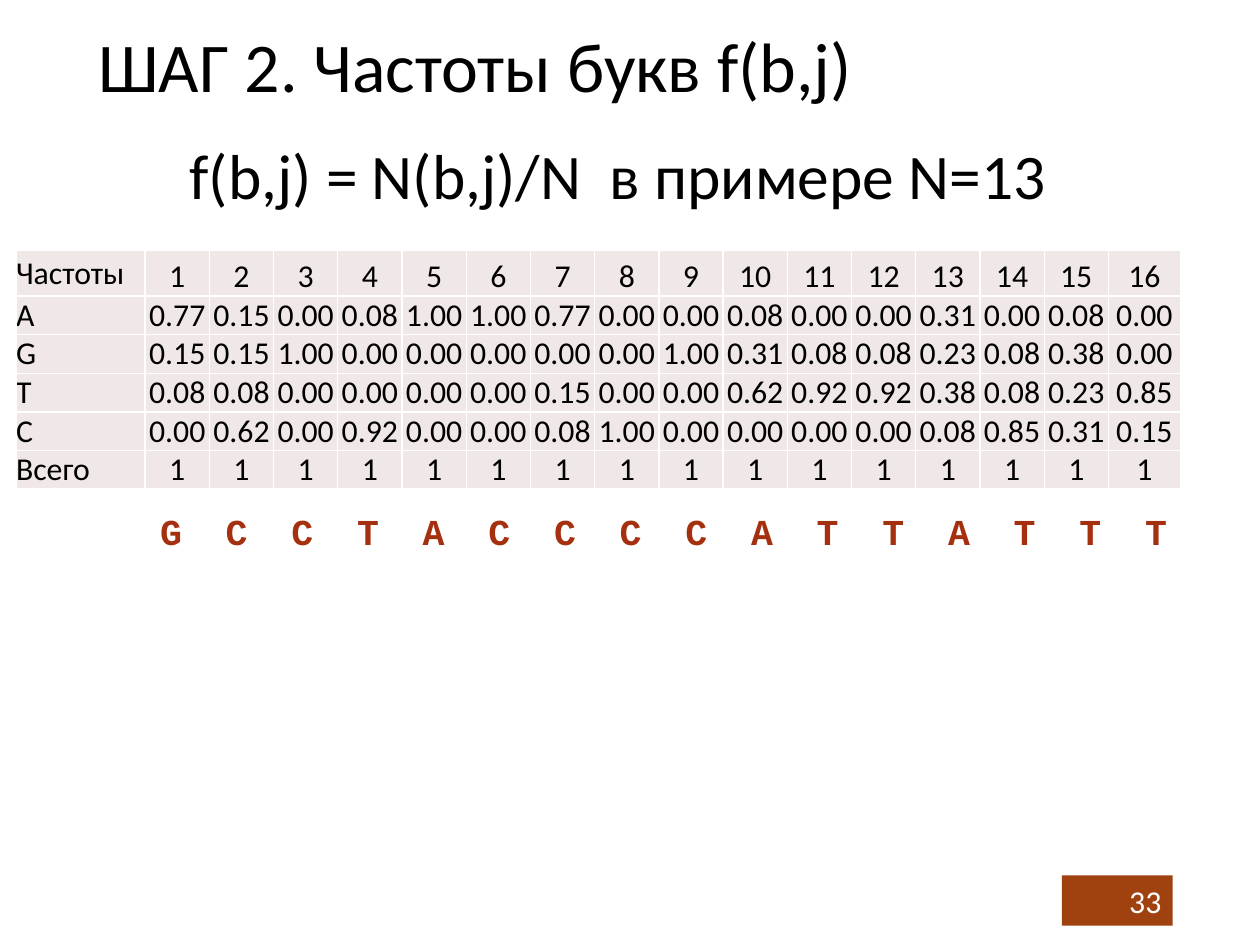
"""Build the slide on letter frequencies f(b,j)."""
from lxml.etree import SubElement
from pptx import Presentation
from pptx.dml.color import RGBColor
from pptx.enum.shapes import MSO_SHAPE as Shape
from pptx.enum.text import MSO_ANCHOR as Anchor, PP_ALIGN as Align
from pptx.oxml.ns import qn
from pptx.util import Cm, Inches, Pt

TITLE = "ШАГ 2. Частоты букв f(b,j)"
FORMULA = "f(b,j) = N(b,j)/N  в примере N=13"
SEQUENCE = "GCCTACCCCATTATTT"
PAGE_NUMBER = "33"
POSITIONS = range(1, 17)
FREQUENCIES = {
    "A": "0.77 0.15 0.00 0.08 1.00 1.00 0.77 0.00 0.00 0.08 0.00 0.00 0.31 0.00 0.08 0.00",
    "G": "0.15 0.15 1.00 0.00 0.00 0.00 0.00 0.00 1.00 0.31 0.08 0.08 0.23 0.08 0.38 0.00",
    "T": "0.08 0.08 0.00 0.00 0.00 0.00 0.15 0.00 0.00 0.62 0.92 0.92 0.38 0.08 0.23 0.85",
    "C": "0.00 0.62 0.00 0.92 0.00 0.00 0.08 1.00 0.00 0.00 0.00 0.00 0.08 0.85 0.31 0.15",
}
ROWS = [
    ["Частоты", *map(str, POSITIONS)],
    *([letter, *values.split()] for letter, values in FREQUENCIES.items()),
    ["Всего", *("1" for _ in POSITIONS)],
]

COLORS = {"text": "000000", "cell": "F0E8E7", "border": "FFFFFF",
          "sequence": "A5300F", "badge": "A04210", "number": "FFFFFF"}
TABLE_LEFT, TABLE_TOP, TABLE_WIDTH, TABLE_HEIGHT = 0.14, 2.19, 10.19, 2.09
FIRST_COLUMN, LAST_COLUMN, HEADER_ROW = 1.13, 0.63, 0.4
INNER_COLUMNS, BODY_ROWS = len(POSITIONS) - 1, len(ROWS) - 1
INNER_COLUMN = (TABLE_WIDTH - FIRST_COLUMN - LAST_COLUMN) / INNER_COLUMNS
BODY_ROW = (TABLE_HEIGHT - HEADER_ROW) / BODY_ROWS
COLUMN_WIDTHS = [FIRST_COLUMN] + [INNER_COLUMN] * INNER_COLUMNS + [LAST_COLUMN]
ROW_HEIGHTS = [HEADER_ROW] + [BODY_ROW] * BODY_ROWS
LETTER_SPACING = 6.9


def color(name):
    return RGBColor.from_string(COLORS[name])


def write(frame, text, size, name="text", font="Calibri", align=Align.LEFT):
    para = frame.paragraphs[0]
    para.text = text
    para.alignment = align
    para.font.name = font
    para.font.size = Pt(size)
    para.font.color.rgb = color(name)
    return para


def add_text(page, area, text, size, wrap=True, **style):
    box = page.shapes.add_textbox(*map(Inches, area))
    box.text_frame.word_wrap = wrap
    return box.text_frame, write(box.text_frame, text, size, **style)


def add_borders(cell):
    properties = cell._tc.get_or_add_tcPr()
    for index, side in enumerate(("lnL", "lnR", "lnT", "lnB")):
        line = properties.makeelement(qn(f"a:{side}"), {"w": str(Pt(1))})
        fill = SubElement(line, qn("a:solidFill"))
        SubElement(fill, qn("a:srgbClr"), val=COLORS["border"])
        properties.insert(index, line)


def add_frequencies(page):
    area = (TABLE_LEFT, TABLE_TOP, TABLE_WIDTH, TABLE_HEIGHT)
    table = page.shapes.add_table(
        len(ROWS), len(COLUMN_WIDTHS), *map(Inches, area)).table
    for column, width in zip(table.columns, COLUMN_WIDTHS):
        column.width = Inches(width)
    for row, height, values in zip(table.rows, ROW_HEIGHTS, ROWS):
        row.height = Inches(height)
        for index, (cell, value) in enumerate(zip(row.cells, values)):
            cell.margin_left = cell.margin_right = 0
            cell.margin_top = cell.margin_bottom = 0
            cell.vertical_anchor = Anchor.BOTTOM if index else Anchor.MIDDLE
            cell.fill.solid()
            cell.fill.fore_color.rgb = color("cell")
            add_borders(cell)
            write(cell.text_frame, value, 20, align=Align.CENTER if index else Align.LEFT)


def add_sequence(page):
    frame, para = add_text(page, (0.3, 4.17, 11.31, 0.77), " ".join(SEQUENCE), 23,
                           name="sequence", font="Courier New")
    frame.margin_left = Inches(1.1)
    frame.margin_top = Inches(0.28)
    para.font.bold = True
    para.runs[0].font._element.set("spc", str(round(LETTER_SPACING * 100)))


def add_badge(page):
    badge = page.shapes.add_shape(Shape.RECTANGLE, *map(Inches, (9.29, 7.66, 0.97, 0.44)))
    badge.shadow.inherit = False
    badge.fill.solid()
    badge.fill.fore_color.rgb = color("badge")
    badge.line.fill.background()
    badge.text_frame.vertical_anchor = Anchor.MIDDLE
    write(badge.text_frame, PAGE_NUMBER, 20, name="number", align=Align.RIGHT)


def main():
    deck = Presentation()
    deck.slide_width = Cm(28)
    deck.slide_height = Cm(21)
    page = deck.slides.add_slide(deck.slide_layouts[6])
    add_badge(page)
    _, title = add_text(page, (0.76, 0.23, 9.51, 1.6), TITLE, 44)
    title.line_spacing = 0.9
    add_sequence(page)
    add_frequencies(page)
    add_text(page, (1.56, 1.14, 7.9, 0.77), FORMULA, 40, wrap=False)
    deck.save("out.pptx")


if __name__ == "__main__":
    main()
